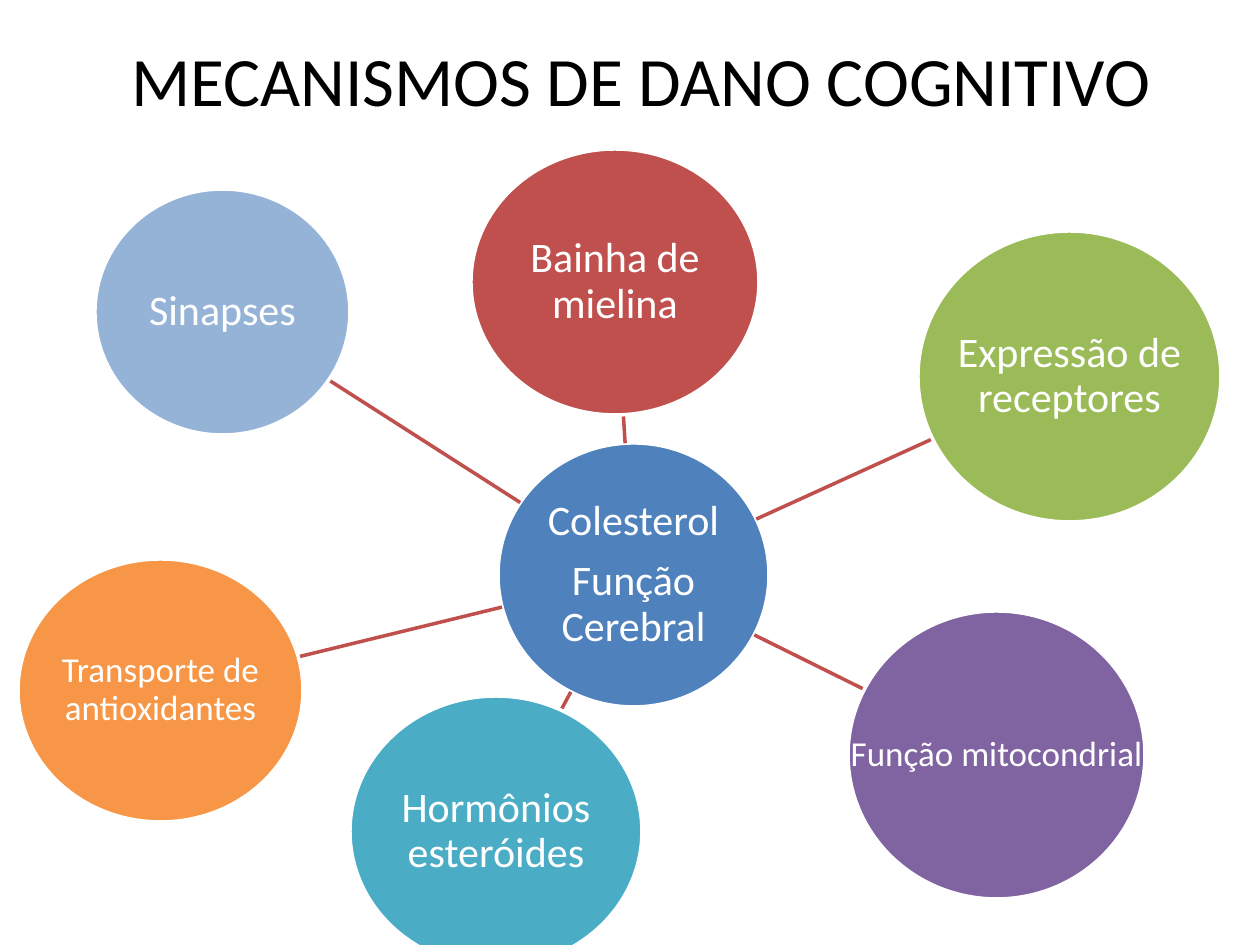
from dataclasses import dataclass
from math import hypot

from lxml import etree
from pptx import Presentation
from pptx import util as u
from pptx.dml.color import RGBColor
from pptx.enum import shapes, text
from pptx.oxml.ns import qn

TITLE = "MECANISMOS DE DANO COGNITIVO"
TITLE_BOX = (74, 0, 1134, 158)


@dataclass(frozen=True)
class Theme:
    font: str = "Calibri"
    title_size: float = 39.6
    large: int = 24
    small: int = 20
    ink: str = "000000"
    paper: str = "FFFFFF"
    spoke: str = "C0504D"
    blue: str = "4F81BD"
    red: str = "C0504D"
    green: str = "9BBB59"
    purple: str = "8064A2"
    aqua: str = "4BACC6"
    orange: str = "F79646"
    pale_blue: str = "95B3D7"
    line_width: int = 2
    line_spacing: float = 0.9
    space_after: float = 0.35


THEME = Theme()

HUB = (["Colesterol", "Função Cerebral"], (498, 443, 271, 264), THEME.blue, THEME.large)
MECHANISMS = [
    (["Bainha de mielina"], (471, 149, 288, 266), THEME.red, THEME.large),
    (["Expressão de receptores"], (918, 231, 303, 291), THEME.green, THEME.large),
    (["Função mitocondrial"], (848, 611, 297, 288), THEME.purple, THEME.small),
    (["Hormônios esteróides"], (350, 696, 292, 271), THEME.aqua, THEME.large),
    (["Transporte de antioxidantes"], (18, 559, 285, 263), THEME.orange, THEME.small),
    (["Sinapses"], (95, 189, 255, 246), THEME.pale_blue, THEME.large),
]


def px(value):
    return u.Emu(round(value * u.Inches(1) / 126))


def rgb(color):
    return RGBColor.from_string(color)


def write(frame, paragraphs, size, color):
    frame.word_wrap = True
    frame.auto_size = text.MSO_AUTO_SIZE.NONE
    frame.vertical_anchor = text.MSO_ANCHOR.MIDDLE
    for index, words in enumerate(paragraphs):
        paragraph = frame.add_paragraph() if index else frame.paragraphs[0]
        paragraph.text = words
        paragraph.alignment = text.PP_ALIGN.CENTER
        paragraph.font.name = THEME.font
        paragraph.font.size = u.Pt(size)
        paragraph.font.color.rgb = rgb(color)


def add_circle(slide, paragraphs, box, color, size):
    place = [px(value) for value in box]
    circle = slide.shapes.add_shape(shapes.MSO_SHAPE.OVAL, *place)
    circle.shadow.inherit = False
    circle.fill.solid()
    circle.fill.fore_color.rgb = rgb(color)
    circle.line.color.rgb = rgb(THEME.paper)
    circle.line.width = u.Pt(THEME.line_width)

    frame = slide.shapes.add_textbox(*place).text_frame
    frame.margin_left = frame.margin_right = px(1)
    frame.margin_top = frame.margin_bottom = px(1)
    write(frame, paragraphs, size, THEME.paper)
    for paragraph in frame.paragraphs:
        paragraph.line_spacing = THEME.line_spacing
        paragraph.space_after = u.Pt(size * THEME.space_after)


def center(box):
    left, top, width, height = box
    return left + width / 2, top + height / 2


def edge_toward(box, target):
    x, y = center(box)
    dx, dy = target[0] - x, target[1] - y
    reach = 1 / hypot(dx / (box[2] / 2), dy / (box[3] / 2))
    return px(x + dx * reach), px(y + dy * reach)


def add_spoke(slide, hub_box, box):
    start = edge_toward(hub_box, center(box))
    end = edge_toward(box, center(hub_box))
    spoke = slide.shapes.add_connector(shapes.MSO_CONNECTOR.STRAIGHT, *start, *end)
    spoke.line.color.rgb = rgb(THEME.spoke)
    spoke.line.width = u.Pt(THEME.line_width)
    etree.SubElement(spoke._element.spPr, qn("a:effectLst"))


def main():
    deck = Presentation()
    deck.slide_width, deck.slide_height = px(1260), px(945)
    slide = deck.slides.add_slide(deck.slide_layouts[5])

    title = slide.shapes.title
    title.left, title.top, title.width, title.height = map(px, TITLE_BOX)
    write(title.text_frame, [TITLE], THEME.title_size, THEME.ink)

    add_circle(slide, *HUB)
    for mechanism in MECHANISMS:
        add_spoke(slide, HUB[1], mechanism[1])
        add_circle(slide, *mechanism)

    deck.save("out.pptx")


if __name__ == "__main__":
    main()
